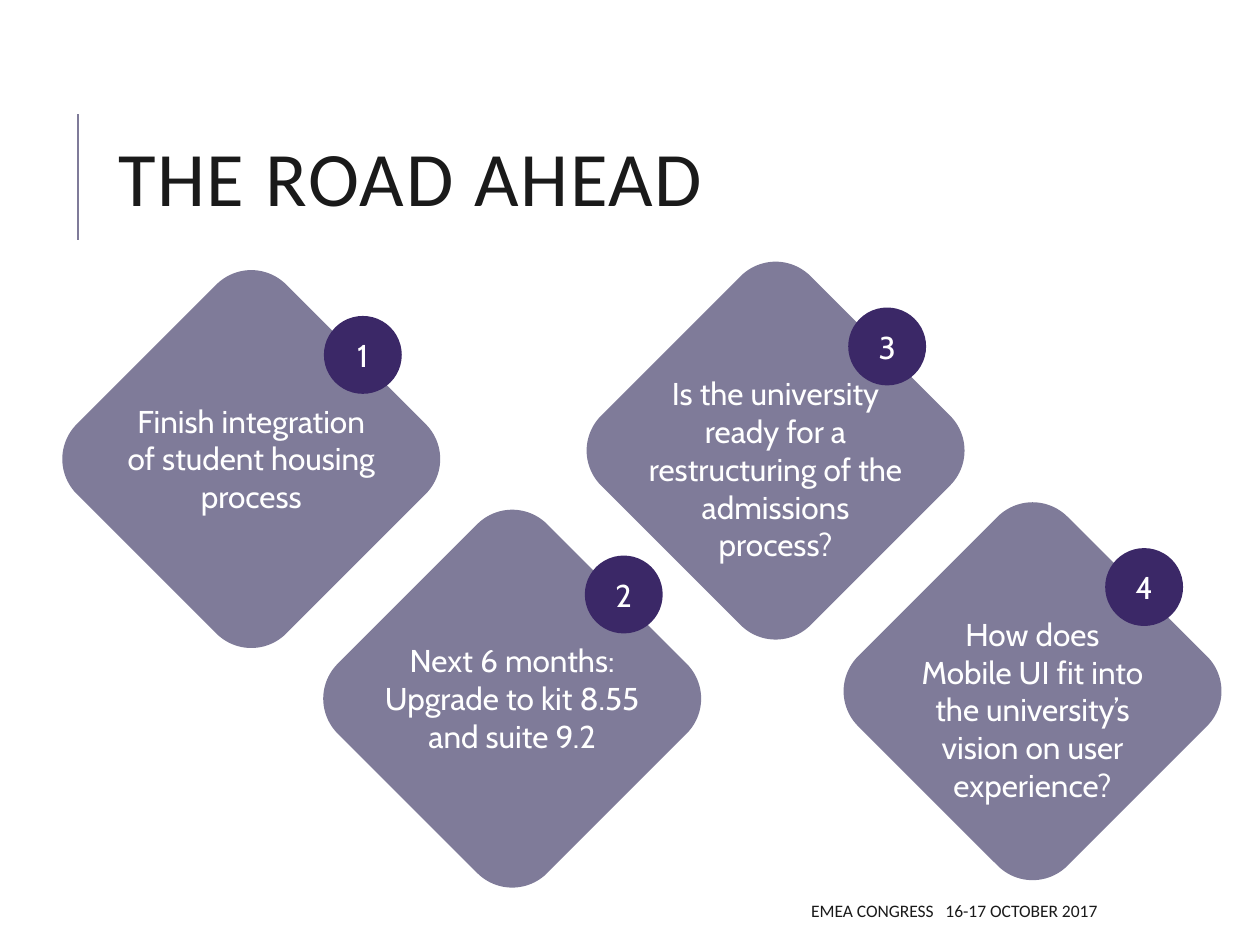
from lxml.etree import SubElement
from pptx import Presentation
from pptx.dml.color import RGBColor
from pptx.enum.shapes import MSO_CONNECTOR, MSO_SHAPE
from pptx.enum.text import MSO_ANCHOR, MSO_AUTO_SIZE, PP_ALIGN
from pptx.oxml.ns import qn
from pptx.util import Cm, Pt

MAUVE, PURPLE, WHITE, INK = "7F7B99", "3B2867", "FFFFFF", "1A1A1A"
SIDE, BADGE, TEXT_W = 5.97, 1.57, 5.72

BODY = {"size": Pt(18), "name": "Cabin"}
TITLE = {"size": Pt(44), "name": "Calibri"}
FOOTER = {"size": Pt(10), "name": "Calibri"}

# left and top of the diamond, text height, paragraphs (all lengths in cm)
STEPS = [
    (2.08, 6.27, 2.57, ["Finish integration\vof student housing process"]),
    (7.34, 11.1, 2.57, ["Next 6 months:", "Upgrade to kit 8.55\vand suite 9.2"]),
    (12.65, 6.1, 3.33, ["Is the university ready for a restructuring "
                        "of the admissions process?"]),
    (17.83, 10.95, 3.33, ["How does", "Mobile UI fit into the university’s "
                          "vision on user experience?"]),
]


def rgb(color):
    return RGBColor.from_string(color)


def style_run(r, color, fmt):
    for name, value in fmt.items():
        setattr(r.font, name, value)
    r.font.color.rgb = rgb(color)


def write(tf, paragraphs, color, fmt, align):
    for i, text in enumerate(paragraphs):
        p = tf.paragraphs[0] if i == 0 else tf.add_paragraph()
        p.text = text
        p.alignment = align
        for r in p.runs:
            style_run(r, color, fmt)


def add_text(s, box, paragraphs, color, fmt, align, anchor=MSO_ANCHOR.MIDDLE):
    tf = s.shapes.add_textbox(*map(Cm, box)).text_frame
    tf.word_wrap = True
    tf.vertical_anchor = anchor
    write(tf, paragraphs, color, fmt, align)
    return tf


def add_solid(s, kind, left, top, size, color):
    sp = s.shapes.add_shape(kind, Cm(left), Cm(top), Cm(size), Cm(size))
    sp.shadow.inherit = False
    sp.fill.solid()
    sp.fill.fore_color.rgb = rgb(color)
    sp.line.fill.background()
    return sp


def add_step(s, number, left, top, height, paragraphs):
    diamond = add_solid(s, MSO_SHAPE.ROUNDED_RECTANGLE, left, top, SIDE, MAUVE)
    diamond.rotation = 45

    badge = add_solid(s, MSO_SHAPE.OVAL, left + 4.45, top + 0.1, BADGE, PURPLE)
    tf = badge.text_frame
    tf.vertical_anchor = MSO_ANCHOR.MIDDLE
    write(tf, [str(number)], WHITE, BODY, PP_ALIGN.CENTER)

    # Text is centred on the diamond
    box = (left + (SIDE - TEXT_W) / 2, top + (SIDE - height) / 2, TEXT_W, height)
    tf = add_text(s, box, paragraphs, WHITE, BODY, PP_ALIGN.CENTER, MSO_ANCHOR.TOP)
    tf.auto_size = MSO_AUTO_SIZE.SHAPE_TO_FIT_TEXT


def add_title(s, text):
    line = s.shapes.add_connector(
        MSO_CONNECTOR.STRAIGHT, Cm(1.57), Cm(4.83), Cm(1.57), Cm(2.29))
    line.line.color.rgb = rgb(MAUVE)
    line.line.width = Pt(1.5)
    SubElement(line._element.spPr, qn("a:effectLst"))

    tf = add_text(s, (2.13, 1.63, 20.24, 4.17), [text], INK, TITLE, PP_ALIGN.LEFT)
    p = tf.paragraphs[0]
    p.line_spacing = 0.8
    p.runs[0].font._element.set("spc", "100")


def add_footer(s, event, date):
    tf = add_text(s, (10.08, 17.98, 12.29, 0.76), [event], INK, FOOTER, PP_ALIGN.RIGHT)
    p = tf.paragraphs[0]
    for text in (" ", date):
        r = p.add_run()
        r.text = text
        style_run(r, INK, FOOTER)
    # Widen the gap between event and date
    p.runs[1].font._element.set("spc", "450")


def main():
    prs = Presentation()
    prs.slide_width, prs.slide_height = Cm(25.4), Cm(19.05)
    s = prs.slides.add_slide(prs.slide_layouts[6])

    add_title(s, "THE ROAD AHEAD")
    for number, step in enumerate(STEPS, 1):
        add_step(s, number, *step)
    add_footer(s, "EMEA CONGRESS", "16-17 OCTOBER 2017")

    prs.save("out.pptx")


if __name__ == "__main__":
    main()
